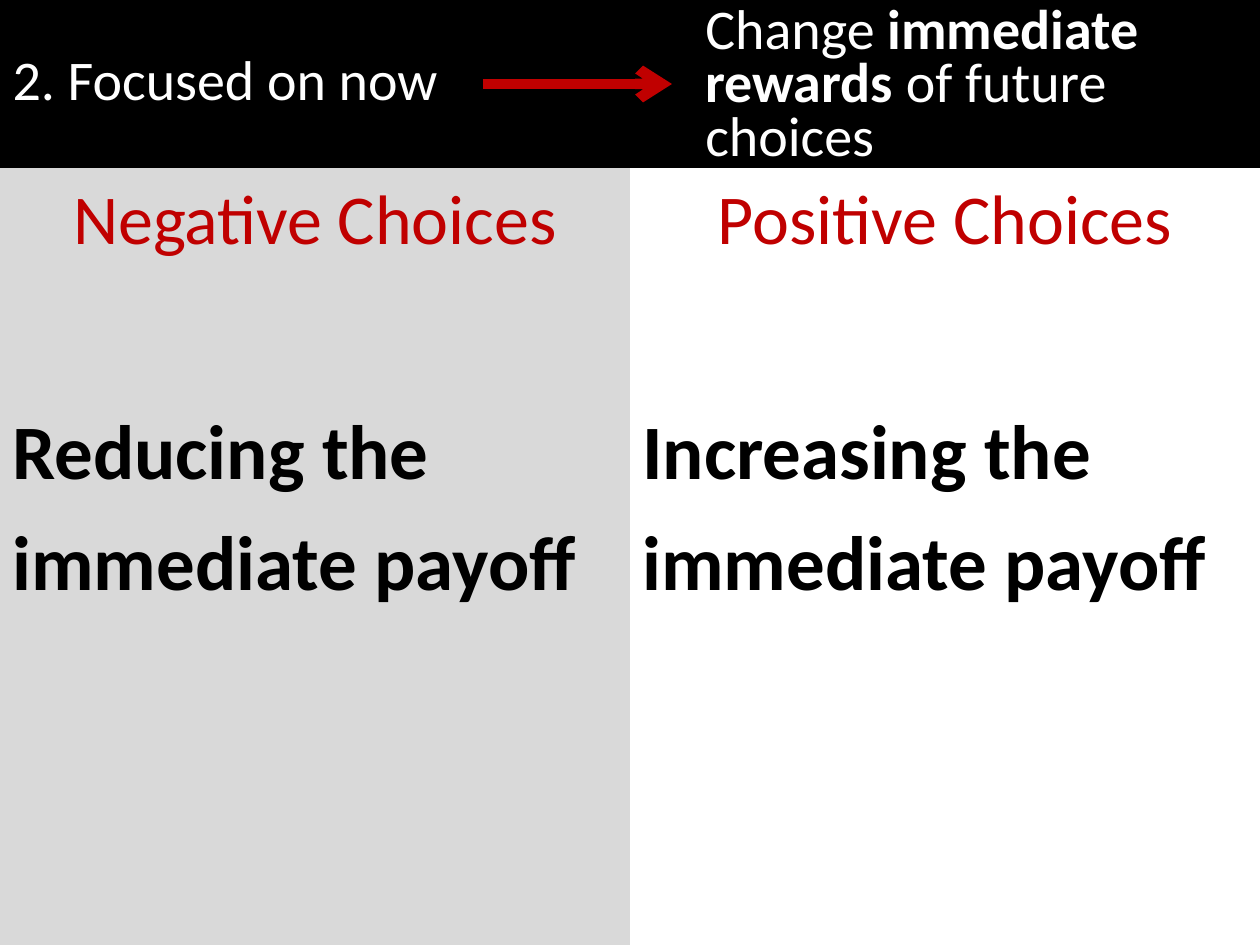
from lxml.etree import SubElement
from pptx import Presentation
from pptx.dml.color import RGBColor
from pptx.enum.shapes import MSO_CONNECTOR, MSO_SHAPE
from pptx.enum.text import MSO_ANCHOR, MSO_AUTO_SIZE, PP_ALIGN
from pptx.oxml.ns import qn
from pptx.util import Pt

BLACK = RGBColor(0x00, 0x00, 0x00)
WHITE = RGBColor(0xFF, 0xFF, 0xFF)
GREY = RGBColor(0xD9, 0xD9, 0xD9)
RED = RGBColor(0xC0, 0x00, 0x00)

WIDTH, HEIGHT = Pt(720), Pt(540)
HEADER_HEIGHT = Pt(96)


def write(holder, runs, *, size, color, bold=False, align=PP_ALIGN.LEFT,
          spacing=1.0, margin_top=Pt(3.6)):
    frame = holder.text_frame
    frame.word_wrap = True
    frame.auto_size = MSO_AUTO_SIZE.NONE
    frame.vertical_anchor = MSO_ANCHOR.TOP
    frame.margin_top = margin_top
    paragraph = frame.paragraphs[0]
    paragraph.alignment = align
    paragraph.line_spacing = spacing
    paragraph.space_before = Pt(0)
    for words, emphasis in runs:
        run = paragraph.add_run()
        run.text = words
        run.font.name = "Calibri"
        run.font.size = Pt(size)
        run.font.bold = bold or emphasis
        run.font.color.rgb = color


def add_panel(slide, left, top, width, height, color):
    panel = slide.shapes.add_shape(MSO_SHAPE.RECTANGLE, left, top, width, height)
    panel.shadow.inherit = False
    panel.fill.solid()
    panel.fill.fore_color.rgb = color
    panel.line.fill.background()


def add_arrow(slide, start, end, y):
    arrow = slide.shapes.add_connector(MSO_CONNECTOR.STRAIGHT, start, y, end, y)
    arrow.line.color.rgb = RED
    arrow.line.width = Pt(6)
    SubElement(arrow.line._get_or_add_ln(), qn("a:tailEnd"), type="arrow")
    SubElement(arrow._element.spPr, qn("a:effectLst"))


def add_header(slide, left, top, width, height):
    add_panel(slide, left, top, width, height, BLACK)
    barrier = slide.shapes.title
    slide.shapes._spTree.append(barrier._element)
    barrier.left, barrier.top = left, top
    barrier.width, barrier.height = Pt(324), height
    write(barrier, [("2. Focused on now", False)], size=32, color=WHITE,
          margin_top=Pt(25.5))
    strategy = slide.shapes.add_textbox(left + Pt(396), top, Pt(324), height)
    write(strategy, [("Change ", False), ("immediate rewards", True),
                     (" of future choices", False)],
          size=32, color=WHITE, spacing=0.8)
    add_arrow(slide, left + Pt(276), left + Pt(384), top + height // 2)


def add_choice_column(slide, left, top, width, height, heading, effect, color=None):
    if color is not None:
        add_panel(slide, left, top, width, height, color)
    inset = Pt(18)
    choices = slide.shapes.add_textbox(left + inset, top, width - 2 * inset, Pt(56))
    write(choices, [(heading, False)], size=40, color=RED, align=PP_ALIGN.CENTER)
    payoff = slide.shapes.add_textbox(left, top + Pt(120), width, Pt(131))
    write(payoff, [(effect, False)], size=44, color=BLACK, bold=True, spacing=1.2)


def main():
    presentation = Presentation()
    presentation.slide_width, presentation.slide_height = WIDTH, HEIGHT
    slide = presentation.slides.add_slide(presentation.slide_layouts[5])
    half = WIDTH // 2
    column_height = HEIGHT - HEADER_HEIGHT
    add_header(slide, 0, 0, WIDTH, HEADER_HEIGHT)
    add_choice_column(slide, 0, HEADER_HEIGHT, half, column_height,
                      "Negative Choices", "Reducing the immediate payoff", GREY)
    add_choice_column(slide, half, HEADER_HEIGHT, half, column_height,
                      "Positive Choices", "Increasing the immediate payoff")
    presentation.save("out.pptx")


if __name__ == "__main__":
    main()
